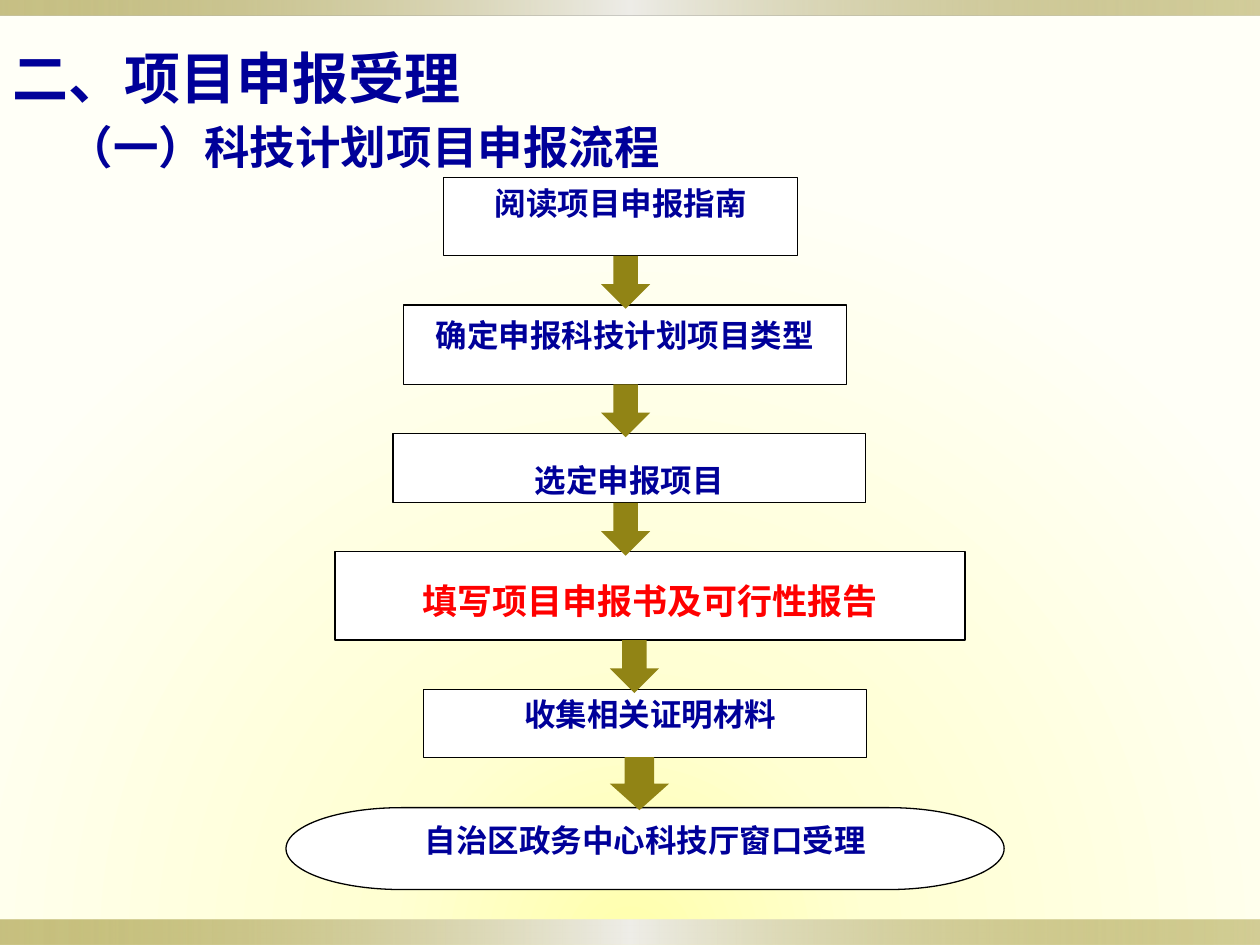
"""Builds a flow chart slide of the project application steps."""
from pptx import Presentation
from pptx import util as u
from pptx.dml.color import RGBColor
from pptx.enum import shapes, text
from pptx.oxml import parse_xml
from pptx.oxml.ns import nsdecls, qn

THEME = dict(
    font="Noto Sans CJK SC", ink="000099", alert="FF0000", paper="FFFFFF",
    edge="000000", arrow="918415", head=32, sub=26, step=18, key=20,
    back=[(0, "FFFFAC", 100), (31, "FFFFD2", 100), (100, "FFFFF7", 100)],
    bar=[(0, "918415", 50), (50, "EEEDE8", 100), (100, "918415", 40)],
)
KIND = shapes.MSO_SHAPE
HEAD = "二、项目申报受理"
SUB = "（一）科技计划项目申报流程"
BARS = [(0, 7.3, 10, 0.2), (0, 0, 10, 0.12)]
STEPS = [
    dict(words="阅读项目申报指南", at=(3.52, 1.41, 2.81, 0.62)),
    dict(words="确定申报科技计划项目类型", at=(3.2, 2.42, 3.52, 0.63), top=0.09),
    dict(words="选定申报项目", at=(3.12, 3.44, 3.75, 0.55), top=0.22),
    dict(words="填写项目申报书及可行性报告", at=(2.66, 4.38, 5, 0.7), top=0.22,
         size="key", ink="alert"),
    dict(words="收集相关证明材料", at=(3.36, 5.47, 3.52, 0.54), left=0.18),
    dict(words="自治区政务中心科技厅窗口受理", at=(2.27, 6.41, 5.7, 0.65), top=0.01,
         kind=KIND.FLOWCHART_TERMINATOR),
]
ARROWS = [(4.77, 0.39), (4.77, 0.39), (4.77, 0.39), (4.84, 0.39), (4.84, 0.47)]
DROP = 0.42


def color(name):
    return RGBColor.from_string(THEME[name])


def blend(fill, root, stops, tail):
    """Give a fill the colour stops and the direction."""
    fill.gradient()
    grad = root.find(".//" + qn("a:gradFill"))
    for part in list(grad):
        grad.remove(part)
    marks = "".join(
        f'<a:gs pos="{pos * 1000}"><a:srgbClr val="{tint}">'
        f'<a:alpha val="{alpha * 1000}"/></a:srgbClr></a:gs>'
        for pos, tint, alpha in stops)
    grad.append(parse_xml(f'<a:gsLst {nsdecls("a")}>{marks}</a:gsLst>'))
    grad.append(parse_xml(tail))


def write(shape, words, size, ink="ink", align=text.PP_ALIGN.CENTER,
          anchor=text.MSO_ANCHOR.TOP, top=0.05, left=0.1, wrap=True):
    """Set the one paragraph of a shape."""
    frame = shape.text_frame
    frame.text = words
    frame.word_wrap = wrap
    frame.auto_size = text.MSO_AUTO_SIZE.NONE
    frame.vertical_anchor = anchor
    frame.margin_top, frame.margin_left = u.Inches(top), u.Inches(left)
    para = frame.paragraphs[0]
    para.alignment = align
    para.space_before = u.Pt(0)
    font = para.font
    font.name, font.size, font.bold = THEME["font"], u.Pt(THEME[size]), True
    font.color.rgb = color(ink)
    base = para._p.pPr.find(qn("a:defRPr"))
    base.find(qn("a:latin")).addnext(
        parse_xml(f'<a:ea {nsdecls("a")} typeface="{THEME["font"]}"/>'))
    return para


def place(shape, at):
    shape.left, shape.top, shape.width, shape.height = map(u.Inches, at)


def draw(slide, kind, at, fill=None, line=None):
    """Add a flat preset shape."""
    shape = slide.shapes.add_shape(kind, *map(u.Inches, at))
    shape.shadow.inherit = False
    if fill:
        shape.fill.solid()
        shape.fill.fore_color.rgb = color(fill)
    if line:
        shape.line.color.rgb = color(line)
        shape.line.width = u.Pt(0.75)
    else:
        shape.line.fill.background()
    return shape


def main():
    deck = Presentation()
    deck.slide_width, deck.slide_height = u.Inches(10), u.Inches(7.5)
    slide = deck.slides.add_slide(deck.slide_layouts[0])
    blend(slide.background.fill, slide._element, THEME["back"],
          f'<a:path {nsdecls("a")} path="circle">'
          '<a:fillToRect l="50000" t="150000" r="50000" b="0"/></a:path>')
    for at in BARS:
        bar = draw(slide, KIND.RECTANGLE, at)
        blend(bar.fill, bar._element, THEME["bar"],
              f'<a:lin {nsdecls("a")} ang="0" scaled="1"/>')

    title, sub = slide.placeholders
    place(title, (0, 0.23, 3.79, 0.66))
    para = write(title, HEAD, "head", align=text.PP_ALIGN.LEFT,
                 anchor=text.MSO_ANCHOR.MIDDLE, wrap=False)
    para.line_spacing = 1.2
    place(sub, (0, 0.86, 5.78, 0.6))
    write(sub, SUB, "sub", anchor=text.MSO_ANCHOR.MIDDLE)

    for step in STEPS:
        box = draw(slide, step.get("kind", KIND.RECTANGLE), step["at"],
                   "paper", "edge")
        write(box, step["words"], step.get("size", "step"),
              step.get("ink", "ink"), top=step.get("top", 0.05),
              left=step.get("left", 0.1))
    for step, (left, wide) in zip(STEPS, ARROWS):
        foot = step["at"][1] + step["at"][3]
        draw(slide, KIND.DOWN_ARROW, (left, foot, wide, DROP), "arrow")
    deck.save("out.pptx")


if __name__ == "__main__":
    main()
